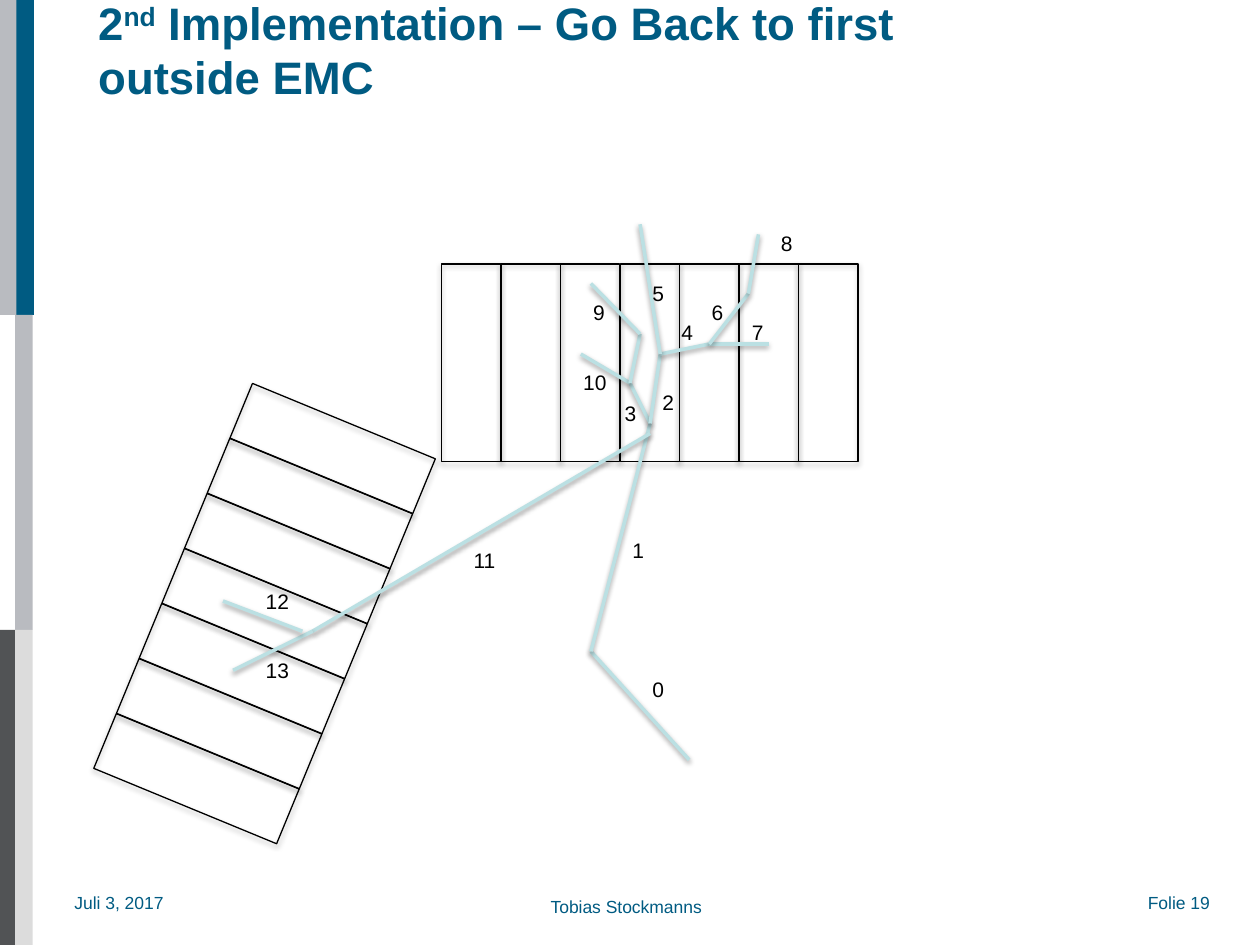
"""Build the slide on going back to the first hit outside the EMC."""
import math

from lxml import etree
from pptx import Presentation
from pptx import util as u
from pptx.dml.color import RGBColor
from pptx.enum import shapes, text
from pptx.oxml.ns import qn

COLORS = {
    "blue": "005B82",
    "silver": "B9BBC0",
    "dark": "515355",
    "pale": "DCDCDC",
    "track": "BBE0E3",
    "black": "000000",
}
BANDS = [
    (0, 0, "silver"), (0, 5, "dark"),
    (0.13, 0, "blue"), (0.12, 2.5, "silver"), (0.12, 5, "pale"),
]
FOOTERS = [
    ("Juli 3, 2017", 0.59, 7.08, 0.85),
    ("Folie 19", 9.11, 7.08, 0.62),
    ("Tobias Stockmanns", 4.37, 7.11, 1.26),
]
CELL_WIDTH, CELL_HEIGHT, CELL_COUNT = 0.47, 1.57, 7
CELL_PITCH = 0.4725
TRACKS = [
    [(5.47, 6.03), (4.69, 5.17), (5.16, 3.36), (5, 3.04), (4.61, 2.81)],
    [(5.16, 3.36), (5.24, 2.81), (5.63, 2.73), (6.1, 2.73)],
    [(5.24, 2.81), (5.08, 1.78)],
    [(5.63, 2.73), (5.94, 2.33), (6.02, 1.86)],
    [(5, 3.04), (5.08, 2.65), (4.69, 2.25)],
    [(5.16, 3.44), (2.48, 5.01), (1.85, 5.32)],
    [(1.77, 4.77), (2.4, 5.01)],
]
TRACK_LABELS = [
    (5.08, 5.32), (4.92, 4.22), (5.16, 3.04), (4.86, 3.13), (5.31, 2.49),
    (5.08, 2.18), (5.55, 2.33), (5.87, 2.49), (6.1, 1.78), (4.61, 2.33),
    (4.53, 2.88), (3.66, 4.3), (2.01, 4.62), (2.01, 5.17),
]


def color(name):
    """Return the named colour."""
    return RGBColor.from_string(COLORS[name])


def inches(*lengths):
    """Return the lengths as Inches."""
    return [u.Inches(length) for length in lengths]


def add_shadow(shape, opacity, distance):
    """Give a shape a soft shadow falling straight down."""
    properties = shape._element.spPr
    for old in properties.findall(qn("a:effectLst")):
        properties.remove(old)
    effects = etree.SubElement(properties, qn("a:effectLst"))
    shadow = etree.SubElement(
        effects, qn("a:outerShdw"), blurRad=str(u.Pt(3.1)),
        dist=str(u.Pt(distance)), dir="5400000", rotWithShape="0")
    black = etree.SubElement(shadow, qn("a:srgbClr"), val=COLORS["black"])
    etree.SubElement(black, qn("a:alpha"), val=str(opacity * 1000))


def add_band(slide, left, top, fill):
    """Add one block of the coloured side strip."""
    band = slide.shapes.add_shape(
        shapes.MSO_SHAPE.RECTANGLE, *inches(left, top, 0.14, 2.5))
    band.shadow.inherit = False
    band.fill.solid()
    band.fill.fore_color.rgb = color(fill)
    band.line.fill.background()


def add_text(slide, words, box, size, tint, inset=True, wrap=False):
    """Add a one-paragraph text box, grown to its text unless it wraps."""
    textbox = slide.shapes.add_textbox(*inches(*box))
    frame = textbox.text_frame
    frame.word_wrap = wrap
    if not wrap:
        frame.auto_size = text.MSO_AUTO_SIZE.SHAPE_TO_FIT_TEXT
    if not inset:
        frame.margin_left = frame.margin_right = 0
        frame.margin_top = frame.margin_bottom = 0
    paragraph = frame.paragraphs[0]
    for part in words:
        paragraph.add_run().text = part
    paragraph.font.name = "Arial"
    paragraph.font.size = u.Pt(size)
    paragraph.font.color.rgb = color(tint)
    return textbox


def add_title(slide):
    """Add the heading with its raised ordinal."""
    words = ["2", "nd", " Implementation – Go Back to first outside EMC"]
    title = add_text(slide, words, (0.78, 0.08, 7.27, 0.62), 26, "blue",
                     inset=False, wrap=True)
    title.text_frame.vertical_anchor = text.MSO_ANCHOR.MIDDLE
    heading = title.text_frame.paragraphs[0]
    heading.font.bold = True
    heading.runs[1]._r.get_or_add_rPr().set("baseline", "30000")


def add_crystals(slide, first_x, first_y, angle=0):
    """Add a row of crystals from the first centre along the given angle."""
    step_x = CELL_PITCH * math.cos(math.radians(angle))
    step_y = CELL_PITCH * math.sin(math.radians(angle))
    for index in range(CELL_COUNT):
        left = first_x + index * step_x - CELL_WIDTH / 2
        top = first_y + index * step_y - CELL_HEIGHT / 2
        crystal = slide.shapes.add_shape(
            shapes.MSO_SHAPE.RECTANGLE,
            *inches(left, top, CELL_WIDTH, CELL_HEIGHT))
        crystal.rotation = angle
        crystal.fill.background()
        crystal.line.color.rgb = color("black")
        crystal.line.width = u.Pt(0.75)
        add_shadow(crystal, 35, 1.8)


def add_track(slide, points):
    """Join successive points of a particle track."""
    for start, end in zip(points, points[1:]):
        segment = slide.shapes.add_connector(
            shapes.MSO_CONNECTOR.STRAIGHT, *inches(*start, *end))
        segment.line.color.rgb = color("track")
        segment.line.width = u.Pt(2)
        add_shadow(segment, 38, 1.6)


def main():
    """Assemble and save the slide."""
    deck = Presentation()
    deck.slide_width, deck.slide_height = inches(10, 7.5)
    slide = deck.slides.add_slide(deck.slide_layouts[6])
    for band in BANDS:
        add_band(slide, *band)
    for words, left, top, width in FOOTERS:
        add_text(slide, [words], (left, top, width, 0.17), 10, "blue",
                 inset=False)
    add_title(slide)
    add_crystals(slide, 3.74, 2.88)
    add_crystals(slide, 1.56, 6.18, angle=292.4)
    for points in TRACKS:
        add_track(slide, points)
    for number, (left, top) in enumerate(TRACK_LABELS):
        width = 0.3 if number < 10 else 0.39
        add_text(slide, [str(number)], (left, top, width, 0.3), 12, "black")
    deck.save("out.pptx")


if __name__ == "__main__":
    main()
